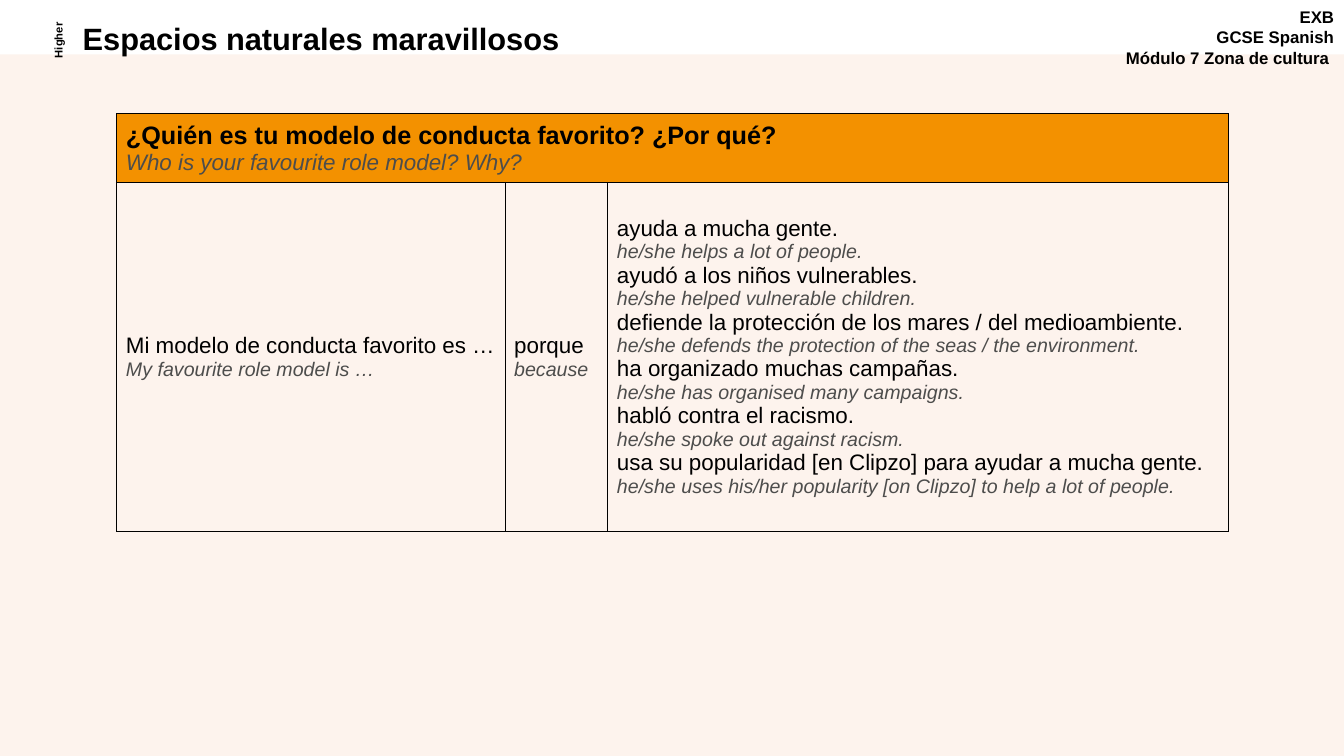
from dataclasses import dataclass

from lxml.etree import SubElement
from pptx import Presentation
from pptx.dml.color import RGBColor
from pptx.enum.shapes import MSO_SHAPE
from pptx.enum.text import MSO_ANCHOR, MSO_AUTO_SIZE, PP_ALIGN
from pptx.oxml.ns import qn
from pptx.slide import Slide
from pptx.table import Table, _Cell as Cell
from pptx.text.text import TextFrame, _Paragraph as Paragraph
from pptx.util import Inches, Pt


@dataclass(frozen=True)
class Theme:
    font: str = "Arial"
    ink: str = "000000"
    translation: str = "4D4D4C"
    panel: str = "FDF3ED"
    heading: str = "F39100"
    title_size: int = 22
    heading_size: int = 18
    phrase_size: int = 16
    translation_size: int = 14
    course_size: int = 12
    tier_size: int = 8
    border: float = 0.75


@dataclass(frozen=True)
class Label:
    text: str
    left: float
    top: float
    width: float
    height: float
    size: int
    align: PP_ALIGN
    rotation: int = 0


@dataclass(frozen=True)
class Phrase:
    spanish: str
    english: str


THEME = Theme()

LABELS = [
    Label("EXB\nGCSE Spanish\nMódulo 7 Zona de cultura ", 10.99, 0.02, 2.34, 0.77,
          THEME.course_size, PP_ALIGN.RIGHT),
    Label("Higher", 0.18, 0.29, 0.78, 0.22, THEME.tier_size, PP_ALIGN.CENTER, 270),
]

QUESTION = Phrase("¿Quién es tu modelo de conducta favorito? ¿Por qué?",
                  "Who is your favourite role model? Why?")
COLUMNS = [
    [Phrase("Mi modelo de conducta favorito es …", "My favourite role model is …")],
    [Phrase("porque", "because")],
    [
        Phrase("ayuda a mucha gente.", "he/she helps a lot of people."),
        Phrase("ayudó a los niños vulnerables.", "he/she helped vulnerable children."),
        Phrase("defiende la protección de los mares / del medioambiente.",
               "he/she defends the protection of the seas / the environment."),
        Phrase("ha organizado muchas campañas.", "he/she has organised many campaigns."),
        Phrase("habló contra el racismo.", "he/she spoke out against racism."),
        Phrase("usa su popularidad [en Clipzo] para ayudar a mucha gente.",
               "he/she uses his/her popularity [on Clipzo] to help a lot of people."),
    ],
]
COLUMN_WIDTHS = [3.85, 1.02, 6.15]
ROW_HEIGHTS = [0.68, 3.46]


def style(para: Paragraph, size: int, color: str, bold: bool = False,
          italic: bool = False) -> None:
    for span in para.runs:
        span.font.name = THEME.font
        span.font.size = Pt(size)
        span.font.bold = bold
        span.font.italic = italic
        span.font.color.rgb = RGBColor.from_string(color)


def write_phrases(frame: TextFrame, phrases: list[Phrase], spanish_size: int,
                  english_size: int, bold: bool = False) -> None:
    frame.text = "\n".join(f"{phrase.spanish}\n{phrase.english}" for phrase in phrases)
    for index, para in enumerate(frame.paragraphs):
        if index % 2 == 0:
            style(para, spanish_size, THEME.ink, bold)
        else:
            style(para, english_size, THEME.translation, italic=True)


def add_panel(page: Slide) -> None:
    panel = page.shapes.add_shape(MSO_SHAPE.RECTANGLE, 0, Inches(0.54),
                                  Inches(13.33), Inches(6.96))
    panel.shadow.inherit = False
    panel.fill.solid()
    panel.fill.fore_color.rgb = RGBColor.from_string(THEME.panel)
    panel.line.fill.background()


def add_label(page: Slide, label: Label) -> None:
    box = page.shapes.add_textbox(Inches(label.left), Inches(label.top),
                                  Inches(label.width), Inches(label.height))
    box.rotation = label.rotation
    frame = box.text_frame
    frame.word_wrap = True
    frame.text = label.text
    for para in frame.paragraphs:
        para.alignment = label.align
        style(para, label.size, THEME.ink, bold=True)


def set_title(page: Slide, text: str) -> None:
    title = page.shapes.title
    title.left, title.top = Inches(0.72), Inches(0.19)
    title.width, title.height = Inches(8.53), Inches(0.43)
    frame = title.text_frame
    frame.text = text
    frame.auto_size = MSO_AUTO_SIZE.NONE
    frame.vertical_anchor = MSO_ANCHOR.TOP
    para = frame.paragraphs[0]
    para.alignment = PP_ALIGN.LEFT
    para.line_spacing = 0.9
    style(para, THEME.title_size, THEME.ink, bold=True)


def format_cell(cell: Cell) -> None:
    cell.vertical_anchor = MSO_ANCHOR.MIDDLE
    cell.margin_left = cell.margin_right = Inches(0.09)
    cell.margin_top = cell.margin_bottom = Inches(0.04)
    properties = cell._tc.get_or_add_tcPr()
    for side in ("a:lnL", "a:lnR", "a:lnT", "a:lnB"):
        line = SubElement(properties, qn(side), w=str(Pt(THEME.border)))
        SubElement(SubElement(line, qn("a:solidFill")), qn("a:srgbClr"), val=THEME.ink)
    cell.fill.background()


def add_phrase_table(page: Slide) -> None:
    table: Table = page.shapes.add_table(
        len(ROW_HEIGHTS), len(COLUMN_WIDTHS), Inches(1.16), Inches(1.13),
        Inches(sum(COLUMN_WIDTHS)), Inches(sum(ROW_HEIGHTS))).table
    table.first_row = table.horz_banding = False
    for column, width in zip(table.columns, COLUMN_WIDTHS):
        column.width = Inches(width)
    for row, height in zip(table.rows, ROW_HEIGHTS):
        row.height = Inches(height)
    for cell in table.iter_cells():
        format_cell(cell)

    # Question across all columns
    heading = table.cell(0, 0)
    heading.merge(table.cell(0, len(COLUMNS) - 1))
    heading.fill.solid()
    heading.fill.fore_color.rgb = RGBColor.from_string(THEME.heading)
    write_phrases(heading.text_frame, [QUESTION], THEME.heading_size,
                  THEME.phrase_size, bold=True)

    # Sentence parts
    for index, phrases in enumerate(COLUMNS):
        write_phrases(table.cell(1, index).text_frame, phrases,
                      THEME.phrase_size, THEME.translation_size)


def main() -> None:
    deck = Presentation()
    deck.slide_width, deck.slide_height = Inches(13.33), Inches(7.5)
    page = deck.slides.add_slide(deck.slide_layouts.get_by_name("Title Only"))

    # Background panel, moved behind the title
    add_panel(page)
    title_element = page.shapes.title.element
    title_element.getparent().append(title_element)

    # Page header
    set_title(page, "Espacios naturales maravillosos")
    for label in LABELS:
        add_label(page, label)

    # Sentence builder
    add_phrase_table(page)
    deck.save("out.pptx")


if __name__ == "__main__":
    main()
